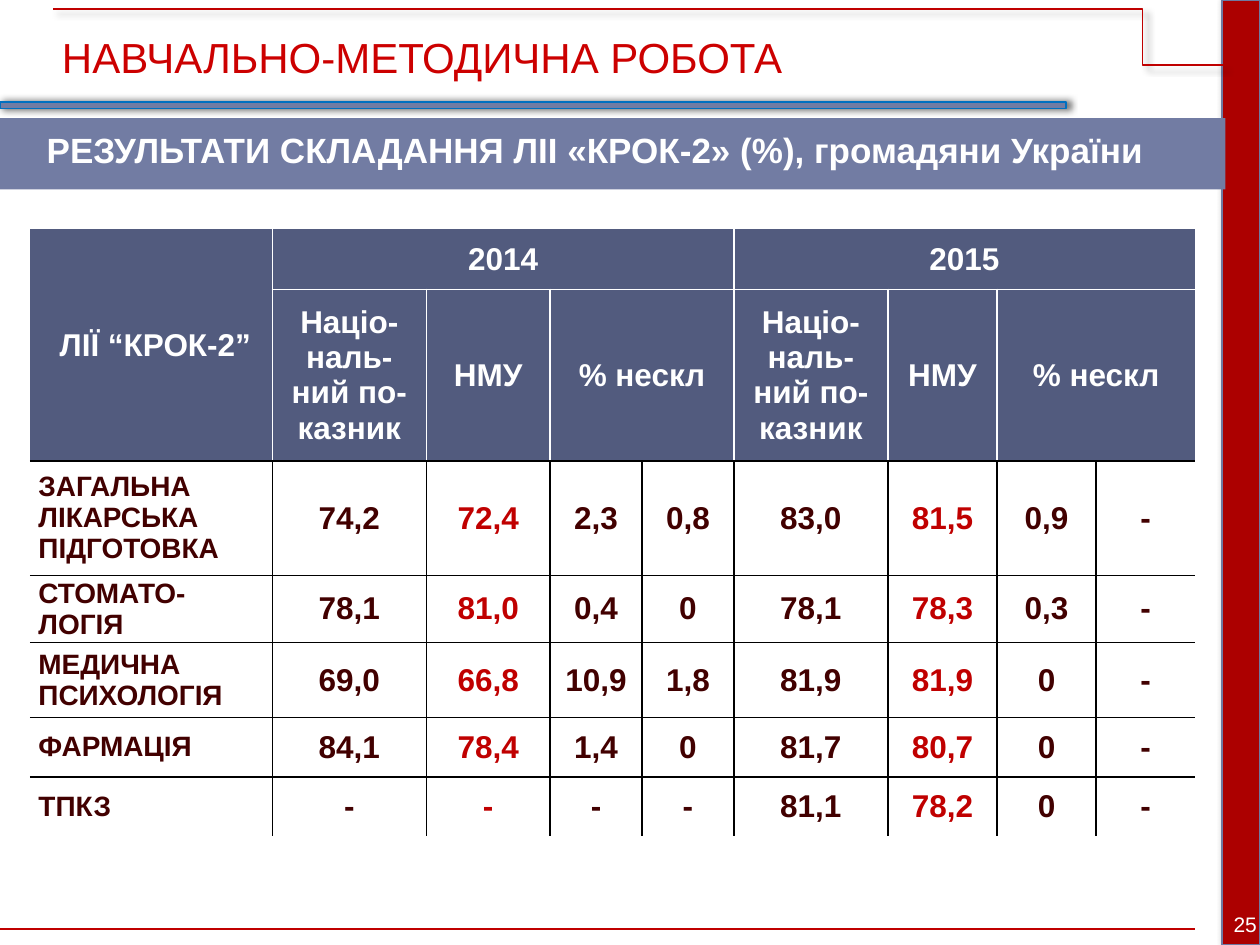
from collections import namedtuple

from lxml.etree import SubElement
from pptx import Presentation
from pptx.dml.color import RGBColor
from pptx.enum.shapes import MSO_CONNECTOR, MSO_SHAPE
from pptx.enum.text import MSO_ANCHOR, MSO_AUTO_SIZE, PP_ALIGN
from pptx.oxml import parse_xml
from pptx.oxml.ns import nsdecls, qn
from pptx.util import Pt

WHITE = RGBColor(0xFF, 0xFF, 0xFF)
BLACK = RGBColor(0, 0, 0)
RED = RGBColor(0xC0, 0, 0)
TITLE_RED = RGBColor(0xCC, 0, 0)
STRIPE_RED = RGBColor(0xAC, 0, 0)
MAROON = RGBColor(0x42, 0, 0)
SLATE = RGBColor(0x72, 0x7C, 0xA3)
SLATE_EDGE = RGBColor(0x6E, 0x79, 0xA1)
BLUE = RGBColor(0, 0x70, 0xC0)
HEADER = RGBColor(0x52, 0x5B, 0x7E)

Box = namedtuple("Box", "left top width height")

COLUMNS = [138.6, 88, 70.8, 52.5, 52.5, 88, 62.4, 56.6, 56.6]
ROWS = [34.4, 98, 65.4, 38.4, 43, 33.8, 33.8]
INDICATORS = ["Націо-наль-ний по-казник", "НМУ", "% нескл", ""]
RESULTS = [
    [" ЛІЇ “КРОК-2”", "2014", "", "", "", "2015", "", "", ""],
    ["", *INDICATORS, *INDICATORS],
    ["ЗАГАЛЬНА ЛІКАРСЬКА ПІДГОТОВКА", "74,2", "72,4", "2,3", "0,8", "83,0", "81,5", "0,9", "-"],
    ["СТОМАТО-ЛОГІЯ", "78,1", "81,0", "0,4", "0", "78,1", "78,3", "0,3", "-"],
    ["МЕДИЧНА ПСИХОЛОГІЯ", "69,0", "66,8", "10,9", "1,8", "81,9", "81,9", "0", "-"],
    ["ФАРМАЦІЯ", "84,1", "78,4", "1,4", "0", "81,7", "80,7", "0", "-"],
    ["ТПКЗ", "-", "-", "-", "-", "81,1", "78,2", "0", "-"],
]
MERGES = [(0, 0, 1, 0), (0, 1, 0, 4), (0, 5, 0, 8), (1, 3, 1, 4), (1, 7, 1, 8)]
HEADER_ROWS = 2
OWN_SCORE_COLUMNS = (2, 6)


def write(frame, text, size=18, color=WHITE, bold=False, align=PP_ALIGN.LEFT):
    para = frame.paragraphs[0]
    para.alignment = align
    span = para.add_run()
    span.text = text
    span.font.name = "Arial"
    span.font.size = Pt(size)
    span.font.bold = bold
    span.font.color.rgb = color


def add_shadow(shape, alpha, distance, angle):
    properties = shape._element.spPr
    for old in properties.findall(qn("a:effectLst")):
        properties.remove(old)
    properties.append(parse_xml(
        f'<a:effectLst {nsdecls("a")}><a:outerShdw blurRad="{Pt(4)}" dist="{Pt(distance)}" '
        f'dir="{angle * 60000}" algn="tl" rotWithShape="0"><a:srgbClr val="000000">'
        f'<a:alpha val="{alpha * 1000}"/></a:srgbClr></a:outerShdw></a:effectLst>'))


def add_bar(page, box, fill, edge=None):
    bar = page.shapes.add_shape(MSO_SHAPE.RECTANGLE, *map(Pt, box))
    bar.shadow.inherit = False
    bar.fill.solid()
    bar.fill.fore_color.rgb = fill
    if edge is None:
        bar.line.fill.background()
    else:
        bar.line.color.rgb = edge
        bar.line.width = Pt(1)
        add_shadow(bar, 60, 2, 0)
    return bar


def add_line(page, kind, start, end):
    line = page.shapes.add_connector(kind, *map(Pt, start + end))
    line.line.color.rgb = RED
    line.line.width = Pt(1)
    SubElement(line._element.spPr, qn("a:effectLst"))
    return line


def add_frame(page, box):
    right, bottom = box.left + box.width, box.top + box.height
    add_bar(page, Box(right - 21.6, box.top, 21.6, box.height), STRIPE_RED, SLATE_EDGE)
    add_bar(page, Box(box.left, box.top + 58.2, 609.2, 3.8), SLATE, BLUE)
    corner = add_line(page, MSO_CONNECTOR.ELBOW,
                      (right - 20.9, box.top + 37), (box.left + 30.2, box.top + 5))
    guides = corner._element.spPr.find(qn("a:prstGeom")).get_or_add_avLst()
    SubElement(guides, qn("a:gd"), name="adj1", fmla="val 6900")
    add_shadow(corner, 40, 3, 45)
    add_line(page, MSO_CONNECTOR.STRAIGHT,
             (box.left, bottom - 9.2), (right - 37, bottom - 9.2))


def add_title(page, box, text):
    title = page.shapes.title
    title.left, title.top, title.width, title.height = map(Pt, box)
    frame = title.text_frame
    frame.word_wrap = True
    frame.auto_size = MSO_AUTO_SIZE.SHAPE_TO_FIT_TEXT
    frame.vertical_anchor = MSO_ANCHOR.TOP
    write(frame, text, size=24, color=TITLE_RED)


def add_banner(page, box, text):
    add_bar(page, box, SLATE)
    label = page.shapes.add_textbox(
        Pt(box.left + 19.6), Pt(box.top + 2.2), Pt(box.width - 20), Pt(31.5))
    frame = label.text_frame
    frame.word_wrap = True
    frame.auto_size = MSO_AUTO_SIZE.SHAPE_TO_FIT_TEXT
    write(frame, text, size=20, bold=True)


def add_page_number(page, box, text):
    bracket = page.shapes.add_shape(MSO_SHAPE.DOUBLE_BRACKET, *map(Pt, box))
    bracket.shadow.inherit = False
    bracket.adjustments[0] = 0.18
    bracket.fill.background()
    bracket.line.fill.background()
    frame = bracket.text_frame
    frame.margin_left = frame.margin_right = frame.margin_top = frame.margin_bottom = 0
    frame.vertical_anchor = MSO_ANCHOR.MIDDLE
    write(frame, text, size=12, align=PP_ALIGN.CENTER)


def set_borders(cell, colors):
    properties = cell._tc.get_or_add_tcPr()
    for place, (side, color) in enumerate(colors.items()):
        paint = f'<a:solidFill><a:srgbClr val="{color}"/></a:solidFill>' if color else "<a:noFill/>"
        properties.insert(place, parse_xml(
            f'<a:ln{side} {nsdecls("a")} w="{Pt(1)}">{paint}</a:ln{side}>'))


def format_cell(cell, row, column, text):
    is_header = row < HEADER_ROWS
    is_label = column == 0 and not is_header
    cell.margin_left = cell.margin_right = Pt(5)
    cell.margin_top = cell.margin_bottom = 0
    cell.vertical_anchor = MSO_ANCHOR.MIDDLE
    if is_header:
        cell.fill.solid()
        cell.fill.fore_color.rgb = HEADER
        color = WHITE
    else:
        cell.fill.background()
        color = RED if column in OWN_SCORE_COLUMNS else MAROON
    if cell.is_spanned:
        return
    write(cell.text_frame, text, size=16 if is_label else 18, color=color, bold=True,
          align=PP_ALIGN.LEFT if is_label else PP_ALIGN.CENTER)
    next_row = row + (cell.span_height if cell.is_merge_origin else 1)
    next_column = column + (cell.span_width if cell.is_merge_origin else 1)
    upright = WHITE if is_header else BLACK
    set_borders(cell, {
        "L": upright if column > 0 else None,
        "R": upright if next_column < len(COLUMNS) else None,
        "T": None if row == 0 else WHITE if is_header else BLACK,
        "B": None if next_row == len(ROWS) else WHITE if next_row < HEADER_ROWS else BLACK,
    })


def add_results(page, box):
    table = page.shapes.add_table(len(ROWS), len(COLUMNS), *map(Pt, box)).table
    table.horz_banding = False
    table.first_row = False
    for column, width in zip(table.columns, COLUMNS):
        column.width = Pt(width)
    for row, height in zip(table.rows, ROWS):
        row.height = Pt(height)
    for top, left, bottom, right in MERGES:
        table.cell(top, left).merge(table.cell(bottom, right))
    for row, texts in enumerate(RESULTS):
        for column, text in enumerate(texts):
            format_cell(table.cell(row, column), row, column, text)


def main():
    deck = Presentation()
    deck.slide_width, deck.slide_height = Pt(720), Pt(540)
    page = deck.slides.add_slide(deck.slide_layouts[5])
    add_frame(page, Box(0, 0, 720, 540))
    add_banner(page, Box(0, 67.5, 700.3, 40.8),
               "РЕЗУЛЬТАТИ СКЛАДАННЯ ЛІІ «КРОК-2» (%), громадяни України")
    add_page_number(page, Box(690, 512.6, 43.2, 31), "25")
    add_results(page, Box(17, 131, sum(COLUMNS), sum(ROWS)))
    add_title(page, Box(28.2, 14.4, 590.4, 36.3), "НАВЧАЛЬНО-МЕТОДИЧНА РОБОТА")
    deck.save("out.pptx")


if __name__ == "__main__":
    main()
